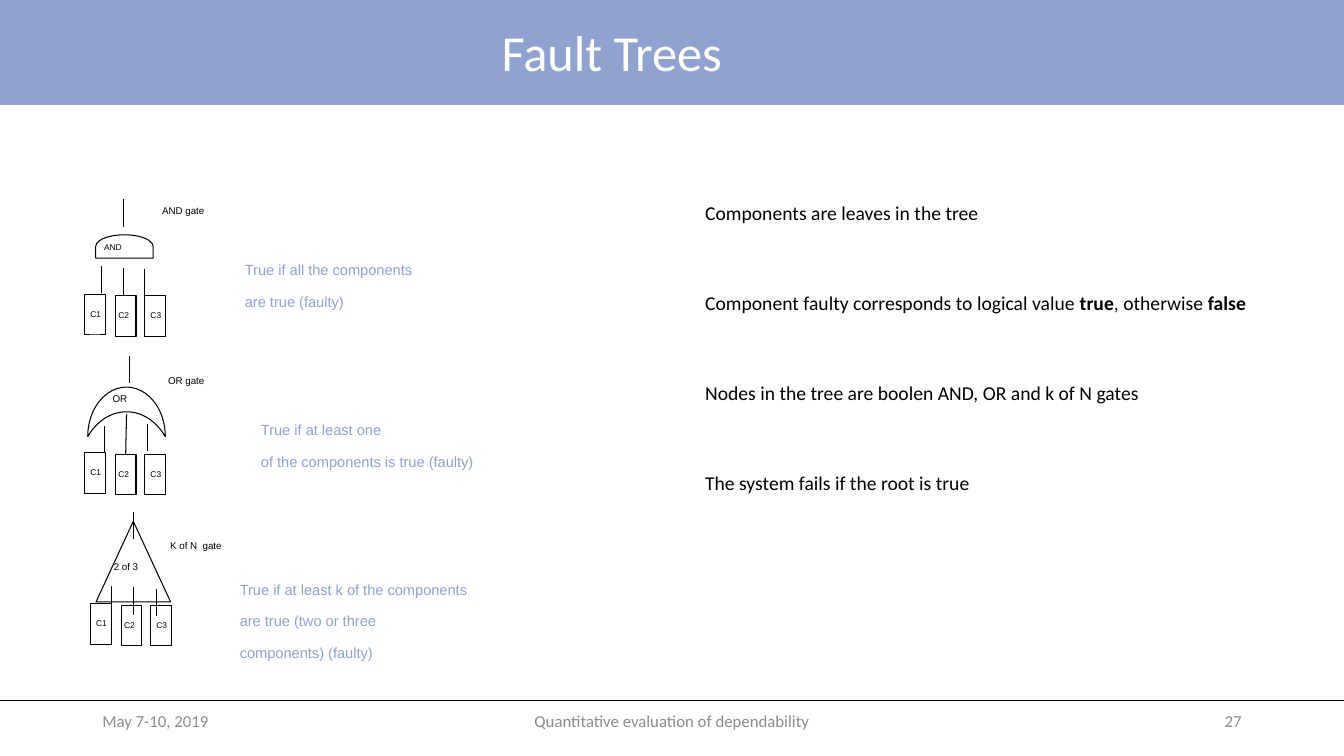
import pptx
import pptx.dml.color
import pptx.enum.shapes
import pptx.enum.text
import pptx.oxml.ns
import pptx.util
from lxml import etree

Pt = pptx.util.Pt
MSO = pptx.enum.shapes.MSO_SHAPE
ALIGN = pptx.enum.text.PP_ALIGN
ANCHOR = pptx.enum.text.MSO_ANCHOR

COLORS = {"band": "90A2CF", "title": "FFFFFF", "footer": "8C8C8C", "ink": "000000"}
W, H = 960, 540
FOOTER_TOP, FOOTER_H = 500.4, 28.8

FOOTERS = [
    ("May 7-10, 2019", 66, 216, ALIGN.LEFT),
    ("Quantitative evaluation of dependability", 318, 324, ALIGN.CENTER),
    ("27", 678, 216, ALIGN.RIGHT),
]

# Each statement is a list of (text, bold) runs.
STATEMENTS = [
    [("Components are leaves in the tree", False)],
    [("Component faulty corresponds to logical value ", False), ("true", True),
     (", otherwise ", False), ("false", True)],
    [("Nodes in the tree are boolen AND, OR and k of N gates", False)],
    [("The system fails if the root is true", False)],
]

# box: left, top, width, height; stems: x, top, length; leaves: corner of C1
GATES = [
    {"shape": MSO.FLOWCHART_DELAY, "box": (80.6, 155.5, 16.6, 41), "turn": 270,
     "symbol": ("AND", 67.2, 167.8, 6),
     "name": ("AND gate", 108.7, 141.1),
     "meaning": (["True if all the components", "are true (faulty)"], 167.8, 169.9, 228),
     "stems": [(72.4, 190, 19.5), (88, 191.5, 19.5), (103, 192.3, 19.5), (87.9, 142.4, 19.5)],
     "leaves": (60.4, 210.3)},
    {"shape": MSO.MOON, "box": (72.7, 266.4, 35.3, 55.4), "turn": 90,
     "symbol": ("OR", 73.4, 275, 7),
     "name": ("OR gate", 113, 262.1),
     "meaning": (["True if at least one", "of the components is true (faulty)"],
                 179.3, 284.4, 284),
     "stems": [(75, 304, 19.5), (90.4, 296, 28.4), (105.3, 302.7, 19.5), (92.6, 254.3, 19.5)],
     "leaves": (60.4, 323.4)},
    {"shape": MSO.ISOSCELES_TRIANGLE, "box": (68.6, 372.4, 53.3, 57.6), "turn": 0,
     "symbol": ("2 of 3", 74.2, 395.3, 7),
     "name": ("K of N  gate", 114.5, 380.2),
     "meaning": (["True if at least k of the components", "are true (two or three",
                  "components) (faulty)"], 164.2, 398.2, 297),
     "stems": [(79.9, 418.5, 19.5), (95.4, 419.6, 19.5), (111.6, 420.6, 19.5),
               (95.2, 365.8, 19.5)],
     "leaves": (64.6, 431.4)},
]
# name, offset of the rectangle, offset of its label within the rectangle
LEAVES = [("C1", 0, 0, -3), ("C2", 22, 1, -5), ("C3", 43, 1, -3)]
LEAF_W, LEAF_H = 14.8, 29

prs = pptx.Presentation()
prs.slide_width, prs.slide_height = Pt(W), Pt(H)
s = prs.slides.add_slide(prs.slide_layouts[6])


def rgb(name):
    return pptx.dml.color.RGBColor.from_string(COLORS[name])


def add_runs(p, runs, size, font, color):
    for text, bold in runs:
        r = p.add_run()
        r.text = text
        r.font.size, r.font.name, r.font.bold = Pt(size), font, bold
        r.font.color.rgb = rgb(color)


def add_frame(x, y, w, h, top=3.6, anchor=ANCHOR.TOP):
    tf = s.shapes.add_textbox(Pt(x), Pt(y), Pt(w), Pt(h)).text_frame
    tf.word_wrap = True
    tf.margin_top = Pt(top)
    tf.vertical_anchor = anchor
    return tf


def add_label(text, x, y, w, h, size, font="Arial", color="ink", align=ALIGN.LEFT,
              top=5.4, anchor=ANCHOR.TOP):
    p = add_frame(x, y, w, h, top, anchor).paragraphs[0]
    p.alignment = align
    add_runs(p, [(text, False)], size, font, color)


def add_outline(kind, x, y, w, h):
    sp = s.shapes.add_shape(kind, Pt(x), Pt(y), Pt(w), Pt(h))
    sp.shadow.inherit = False
    sp.fill.background()
    sp.line.color.rgb = rgb("ink")
    sp.line.width = Pt(0.75)
    return sp


def add_line(x1, y1, x2, y2, width):
    line = s.shapes.add_connector(pptx.enum.shapes.MSO_CONNECTOR.STRAIGHT,
                                  Pt(x1), Pt(y1), Pt(x2), Pt(y2))
    line.line.color.rgb = rgb("ink")
    line.line.width = Pt(width)
    etree.SubElement(line._element.spPr, pptx.oxml.ns.qn("a:effectLst"))
    return line


def add_gate(gate):
    sp = add_outline(gate["shape"], *gate["box"])
    sp.rotation = gate["turn"]
    text, x, y, size = gate["symbol"]
    add_label(text, x, y, 46, 21, size)
    text, x, y = gate["name"]
    add_label(text, x, y, 78, 21.6, 7)

    lines, x, y, w = gate["meaning"]
    p = add_frame(x, y, w, 21.8 * len(lines) + 7.2, top=6.3).paragraphs[0]
    p.line_spacing = 1.8
    for i, text in enumerate(lines):
        if i:
            p.add_line_break()
        add_runs(p, [(text, False)], 10.5, "Arial", "band")

    left, top = gate["leaves"]
    boxes = []
    for name, dx, dy, label_dx in LEAVES:
        x, y = left + dx, top + dy
        add_label(name, x + label_dx, y + 5, 27.4, 19.4, 6)
        boxes.append((add_outline(MSO.RECTANGLE, x, y, LEAF_W, LEAF_H),
                      x + LEAF_W / 2, y))
    for x, y, length in gate["stems"]:
        stem = add_line(x, y, x, y + length, 0.75)
        for box, mid_x, box_top in boxes:
            if abs(x - mid_x) < 1 and abs(y + length - box_top) < 1:
                stem.end_connect(box, 0)


band = s.shapes.add_shape(MSO.RECTANGLE, 0, 0, Pt(W), Pt(75))
band.shadow.inherit = False
band.fill.solid()
band.fill.fore_color.rgb = rgb("band")
band.line.fill.background()
add_line(0, FOOTER_TOP, W, FOOTER_TOP, 0.5)
add_label("Fault Trees", 0, 0, 874, 73.4, 36, "Calibri", "title", ALIGN.CENTER,
          3.6, ANCHOR.MIDDLE)
for text, x, w, align in FOOTERS:
    add_label(text, x, FOOTER_TOP, w, FOOTER_H, 12, "Calibri", "footer", align,
              3.6, ANCHOR.MIDDLE)

tf = add_frame(496.6, 136.1, 415.4, 295.2, top=7.2)
for i, runs in enumerate(STATEMENTS):
    p = tf.add_paragraph() if i else tf.paragraphs[0]
    p.space_before = Pt(47.5 if i else 0)
    add_runs(p, runs, 14, "Calibri", "ink")

for gate in GATES:
    add_gate(gate)

prs.save("out.pptx")
